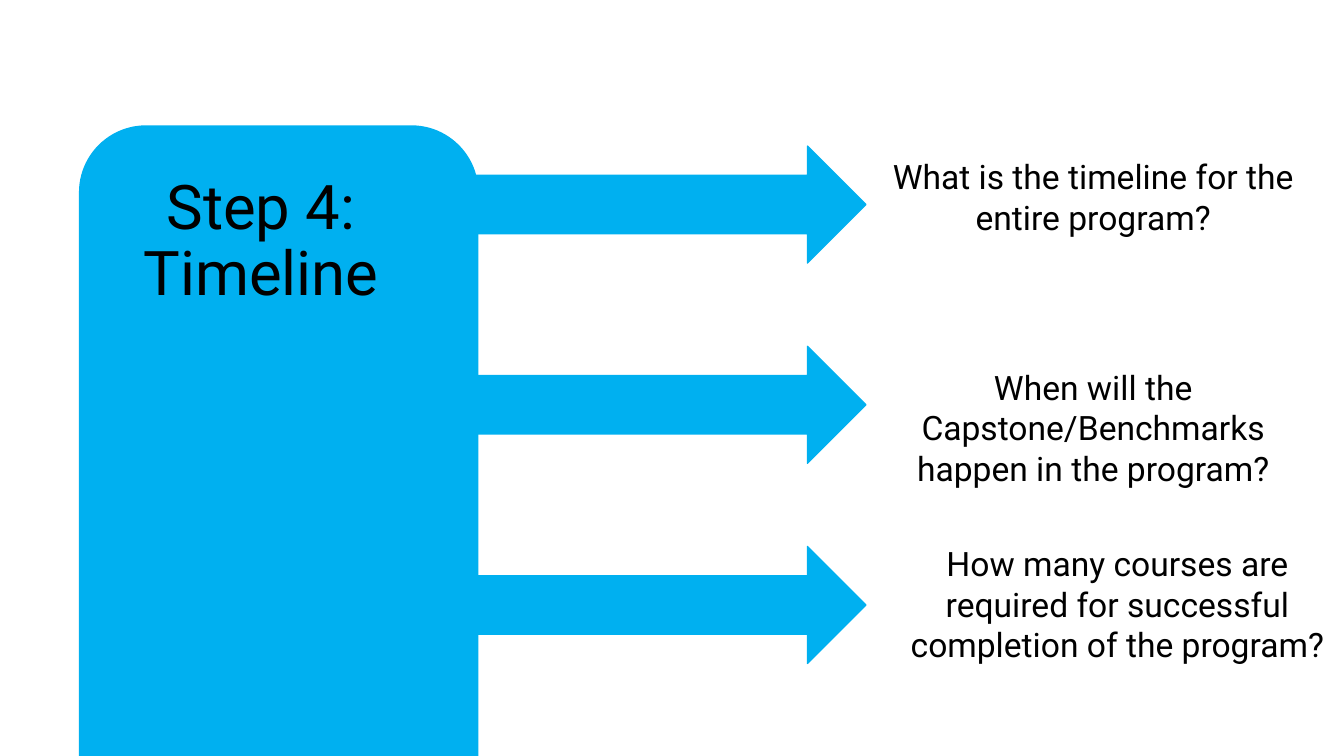
"""Build the Step 4 timeline slide with three questions."""
from pptx import Presentation
from pptx.dml.color import RGBColor
from pptx.enum.shapes import MSO_SHAPE as Shape
from pptx.enum.text import MSO_ANCHOR as Anchor, PP_ALIGN as Align
from pptx.util import Pt

BLUE = RGBColor(0x00, 0xB0, 0xF0)
BLACK = RGBColor(0x00, 0x00, 0x00)


def add_block(preset, left, top, width, height):
    block = slide.shapes.add_shape(preset, Pt(left), Pt(top), Pt(width), Pt(height))
    block.shadow.inherit = False
    block.fill.solid()
    block.fill.fore_color.rgb = BLUE
    block.line.color.rgb = BLUE
    block.line.width = Pt(1)
    return block


def write(frame, text, size):
    frame.word_wrap = True
    frame.text = text
    paragraph = frame.paragraphs[0]
    paragraph.alignment = Align.CENTER
    font = paragraph.runs[0].font
    font.name = "Roboto"
    font.size = Pt(size)
    font.color.rgb = BLACK
    return paragraph


deck = Presentation()
deck.slide_width, deck.slide_height = Pt(960), Pt(540)
slide = deck.slides.add_slide(deck.slide_layouts[5])

panel = add_block(Shape.ROUNDED_RECTANGLE, 56.9, 90, 284.4, 540.7)

title = slide.shapes.title
title.left, title.top, title.width, title.height = Pt(74.9), Pt(121), Pt(223.2), Pt(104.4)
title.text_frame.vertical_anchor = Anchor.MIDDLE
write(title.text_frame, "Step 4: Timeline", 44).line_spacing = 0.9
panel.element.addnext(title.element)

questions = [
    ("What is the timeline for the entire program?", 619.2, 108, 65.5),
    ("When will the Capstone/Benchmarks happen in the program?", 619.2, 258.5, 94.3),
    ("How many courses are required for successful completion of the program?",
     636.5, 384.5, 123.8),
]
for row, (question, left, top, height) in enumerate(questions):
    add_block(Shape.RIGHT_ARROW, 286.6, 104.4 + 143 * row, 331.9, 83.5)
    box = slide.shapes.add_textbox(Pt(left), Pt(top), Pt(323.3), Pt(height))
    write(box.text_frame, question, 24)

deck.save("out.pptx")
